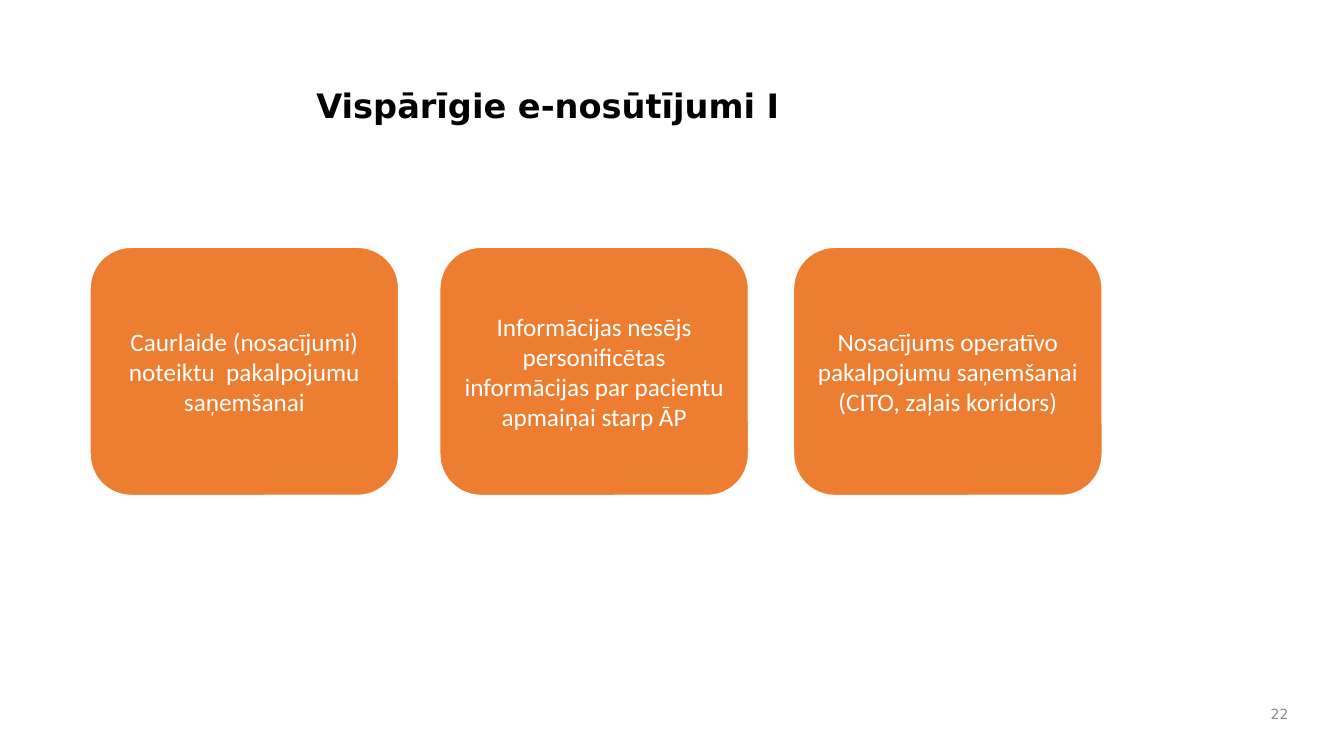
from dataclasses import dataclass

from pptx import Presentation
from pptx.dml.color import RGBColor
from pptx.enum.shapes import MSO_SHAPE
from pptx.enum.text import MSO_ANCHOR, PP_ALIGN
from pptx.shapes.autoshape import Shape
from pptx.slide import Slide
from pptx.util import Pt

BLACK = RGBColor(0x00, 0x00, 0x00)
WHITE = RGBColor(0xFF, 0xFF, 0xFF)
GREY = RGBColor(0x8C, 0x8C, 0x8C)
ORANGE = RGBColor(0xED, 0x7D, 0x31)
HEADING_FONT = "DejaVu Sans"
BODY_FONT = "Calibri"

PURPOSE_TOP = 176.4
PURPOSE_WIDTH = 221
PURPOSE_HEIGHT = 177.8


@dataclass(frozen=True)
class Purpose:
    left: float
    wording: str


PURPOSES = (
    Purpose(64.1, "Caurlaide (nosacījumi) noteiktu  pakalpojumu saņemšanai"),
    Purpose(313.9, "Informācijas nesējs personificētas informācijas par pacientu apmaiņai starp ĀP"),
    Purpose(566.6, "Nosacījums operatīvo pakalpojumu saņemšanai (CITO, zaļais koridors)"),
)


def write(
    holder: Shape,
    wording: str,
    *,
    size: float,
    color: RGBColor,
    font: str = HEADING_FONT,
    bold: bool = False,
    align: PP_ALIGN = PP_ALIGN.LEFT,
    anchor: MSO_ANCHOR = MSO_ANCHOR.MIDDLE,
    line_spacing: float = 1.0,
) -> None:
    frame = holder.text_frame
    frame.word_wrap = True
    frame.vertical_anchor = anchor
    paragraph = frame.paragraphs[0]
    paragraph.alignment = align
    paragraph.line_spacing = line_spacing
    run = paragraph.add_run()
    run.text = wording
    run.font.name = font
    run.font.size = Pt(size)
    run.font.bold = bold
    run.font.color.rgb = color


def draw_purpose(slide: Slide, purpose: Purpose) -> None:
    card = slide.shapes.add_shape(
        MSO_SHAPE.ROUNDED_RECTANGLE,
        Pt(purpose.left), Pt(PURPOSE_TOP), Pt(PURPOSE_WIDTH), Pt(PURPOSE_HEIGHT),
    )
    card.shadow.inherit = False
    card.fill.solid()
    card.fill.fore_color.rgb = ORANGE
    card.line.color.rgb = WHITE
    card.line.width = Pt(1.5)
    write(card, purpose.wording, size=18, color=WHITE, font=BODY_FONT, align=PP_ALIGN.CENTER)


def main() -> None:
    presentation = Presentation()
    presentation.slide_width = Pt(960)
    presentation.slide_height = Pt(540)
    slide = presentation.slides.add_slide(presentation.slide_layouts[6])

    title = slide.shapes.add_textbox(Pt(218.9), Pt(60.5), Pt(640), Pt(81.4))
    write(title, "Vispārīgie e-nosūtījumi I", size=24, color=BLACK, bold=True,
          anchor=MSO_ANCHOR.TOP, line_spacing=0.9)

    page_number = slide.shapes.add_textbox(Pt(895.7), Pt(498.2), Pt(31.7), Pt(23.8))
    write(page_number, "22", size=10, color=GREY, align=PP_ALIGN.RIGHT)

    for purpose in PURPOSES:
        draw_purpose(slide, purpose)

    presentation.save("out.pptx")


if __name__ == "__main__":
    main()
